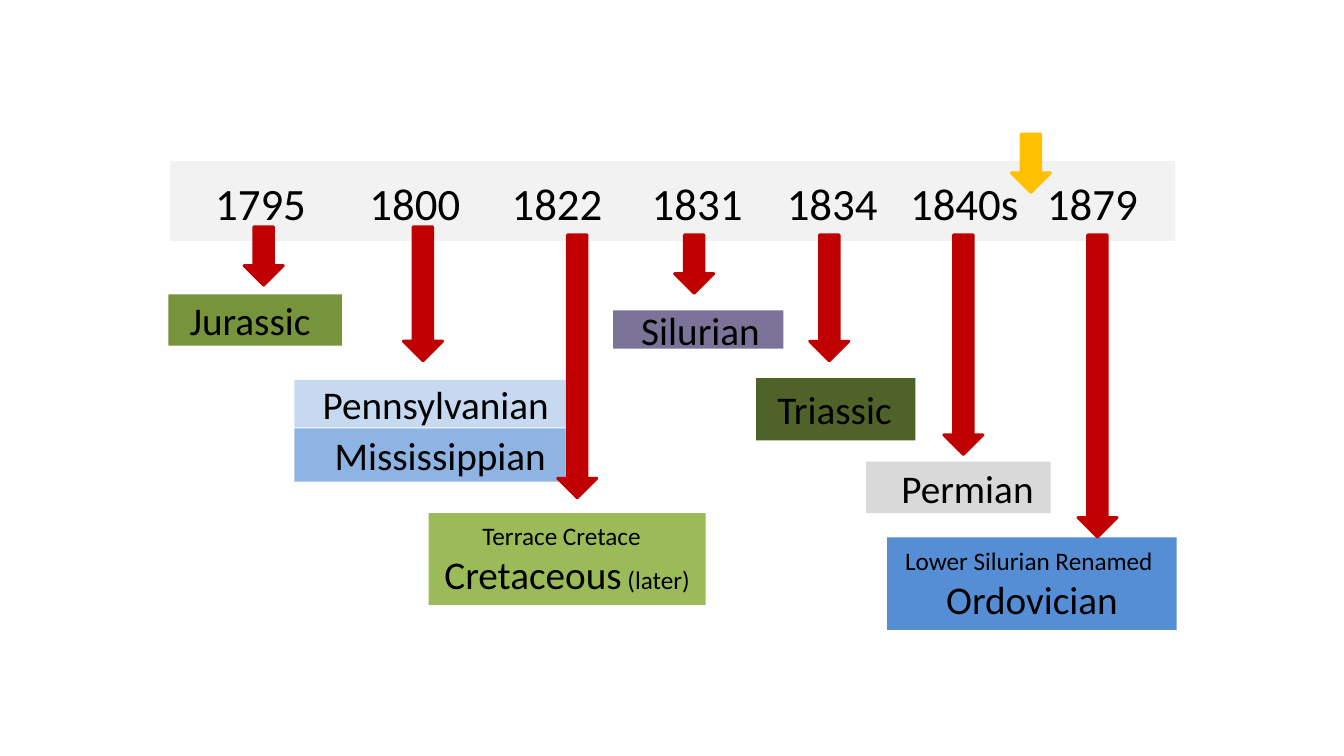
"""Builds a timeline slide of when geological periods were named."""
from pptx import Presentation
from pptx.dml.color import RGBColor
from pptx.enum.shapes import MSO_SHAPE
from pptx.enum.text import MSO_ANCHOR, MSO_AUTO_SIZE, PP_ALIGN
from pptx.util import Inches, Pt

RECT, ARROW = MSO_SHAPE.RECTANGLE, MSO_SHAPE.DOWN_ARROW
LEFT, CENTER = PP_ALIGN.LEFT, PP_ALIGN.CENTER
MIDDLE, GROW = MSO_ANCHOR.MIDDLE, MSO_AUTO_SIZE.SHAPE_TO_FIT_TEXT

FONT = "Calibri"
BLACK = RGBColor(0x00, 0x00, 0x00)
WHITE = RGBColor(0xFF, 0xFF, 0xFF)
PALE = RGBColor(0xF2, 0xF2, 0xF2)
GRAY = RGBColor(0xD9, 0xD9, 0xD9)
RED = RGBColor(0xC0, 0x00, 0x00)
GOLD = RGBColor(0xFF, 0xC0, 0x00)
BLUE = RGBColor(0x55, 0x8E, 0xD5)
SKY = RGBColor(0x8E, 0xB4, 0xE3)
ICE = RGBColor(0xC6, 0xD9, 0xF1)
PURPLE = RGBColor(0x7B, 0x74, 0x98)
FOREST = RGBColor(0x4F, 0x62, 0x28)
OLIVE = RGBColor(0x77, 0x93, 0x3C)
GREEN = RGBColor(0x9B, 0xBB, 0x59)

PERIODS = [
    ("Silurian", (6.08, 3.08, 1.69, 0.38), PURPLE, LEFT, 0.28),
    ("Mississippian", (2.92, 4.25, 2.69, 0.53), SKY, CENTER, 0.3),
    ("Pennsylvanian", (2.92, 3.77, 2.69, 0.47), ICE, LEFT, 0.28),
    ("Permian", (8.59, 4.58, 1.83, 0.51), GRAY, CENTER, 0.28),
    ("Triassic", (7.5, 3.75, 1.58, 0.62), FOREST, LEFT, 0.21),
    ("Jurassic", (1.67, 2.92, 1.72, 0.51), OLIVE, LEFT, 0.21),
]
RENAMED = [
    ((8.8, 5.33, 2.87, 0.92), BLUE, 0.06,
     [[("Lower Silurian Renamed", 18)], [("Ordovician", 28)]]),
    ((4.25, 5.09, 2.75, 0.91), GREEN, 0.11,
     [[("Terrace Cretace", 18)], [("Cretaceous", 28), (" (later)", 18)]]),
]
YEARS = [
    ("1795", 1.92, 1.33), ("1800", 3.39, 1.45), ("1822", 4.8, 1.45),
    ("1831", 6.33, 1.17), ("1834", 7.67, 1.17), ("1840s", 8.8, 1.53),
    ("1879", 10.25, 1.17),
]
ARROWS = [
    (2.42, 2.25, 0.58, RED), (4, 2.25, 1.33, RED), (5.53, 2.33, 2.61, RED),
    (6.69, 2.33, 0.58, RED), (8.03, 2.33, 1.25, RED),
    (9.36, 2.33, 2.18, RED), (10.69, 2.33, 3, RED),
    (10.03, 1.33, 0.58, GOLD),
]


def add_run(para, text, size):
    """Add one black run to a paragraph."""
    run = para.add_run()
    run.text = text
    run.font.name = FONT
    run.font.size = Pt(size)
    run.font.color.rgb = BLACK


def add_block(slide, kind, box, fill, line=None):
    """Add a filled shape, with an outline if a line colour is given."""
    shape = slide.shapes.add_shape(kind, *map(Inches, box))
    shape.shadow.inherit = False
    shape.fill.solid()
    shape.fill.fore_color.rgb = fill
    if line is None:
        shape.line.fill.background()
    else:
        shape.line.color.rgb = line
        shape.line.width = Pt(2)
    return shape


def add_period(slide, name, box, fill, align, inset):
    """Add a coloured box with a period name set in from the left."""
    frame = add_block(slide, RECT, box, fill).text_frame
    frame.word_wrap = True
    frame.vertical_anchor = MIDDLE
    frame.margin_left = Inches(inset)
    para = frame.paragraphs[0]
    para.alignment = align
    add_run(para, name, 28)


def add_renamed(slide, box, fill, shift, lines):
    """Add a box with a former name, nudged left, above the later one."""
    frame = add_block(slide, RECT, box, fill).text_frame
    frame.word_wrap = True
    frame.vertical_anchor = MIDDLE
    frame.margin_left = 0
    frame.margin_right = Inches(shift)
    old, new = frame.paragraphs[0], frame.add_paragraph()
    new._p.get_or_add_pPr().set("marL", str(Inches(shift)))
    for para, runs in zip((old, new), lines):
        para.alignment = CENTER
        for text, size in runs:
            add_run(para, text, size)


def add_year(slide, year, left, width):
    """Add a year on the time band."""
    box = map(Inches, (left, 1.69, width, 0.64))
    frame = slide.shapes.add_textbox(*box).text_frame
    frame.word_wrap = True
    frame.auto_size = GROW
    para = frame.paragraphs[0]
    para.alignment = CENTER
    add_run(para, year, 32)


def main():
    """Build and save the slide."""
    deck = Presentation()
    deck.slide_width, deck.slide_height = Inches(13.33), Inches(7.5)
    slide = deck.slides.add_slide(deck.slide_layouts[6])
    add_renamed(slide, *RENAMED[0])
    for period in PERIODS:
        add_period(slide, *period)
    add_renamed(slide, *RENAMED[1])
    add_block(slide, RECT, (1.67, 1.58, 10, 0.83), PALE, WHITE)
    for year in YEARS:
        add_year(slide, *year)
    for left, top, height, color in ARROWS:
        add_block(slide, ARROW, (left, top, 0.39, height), color, color)
    deck.save("out.pptx")


if __name__ == "__main__":
    main()
